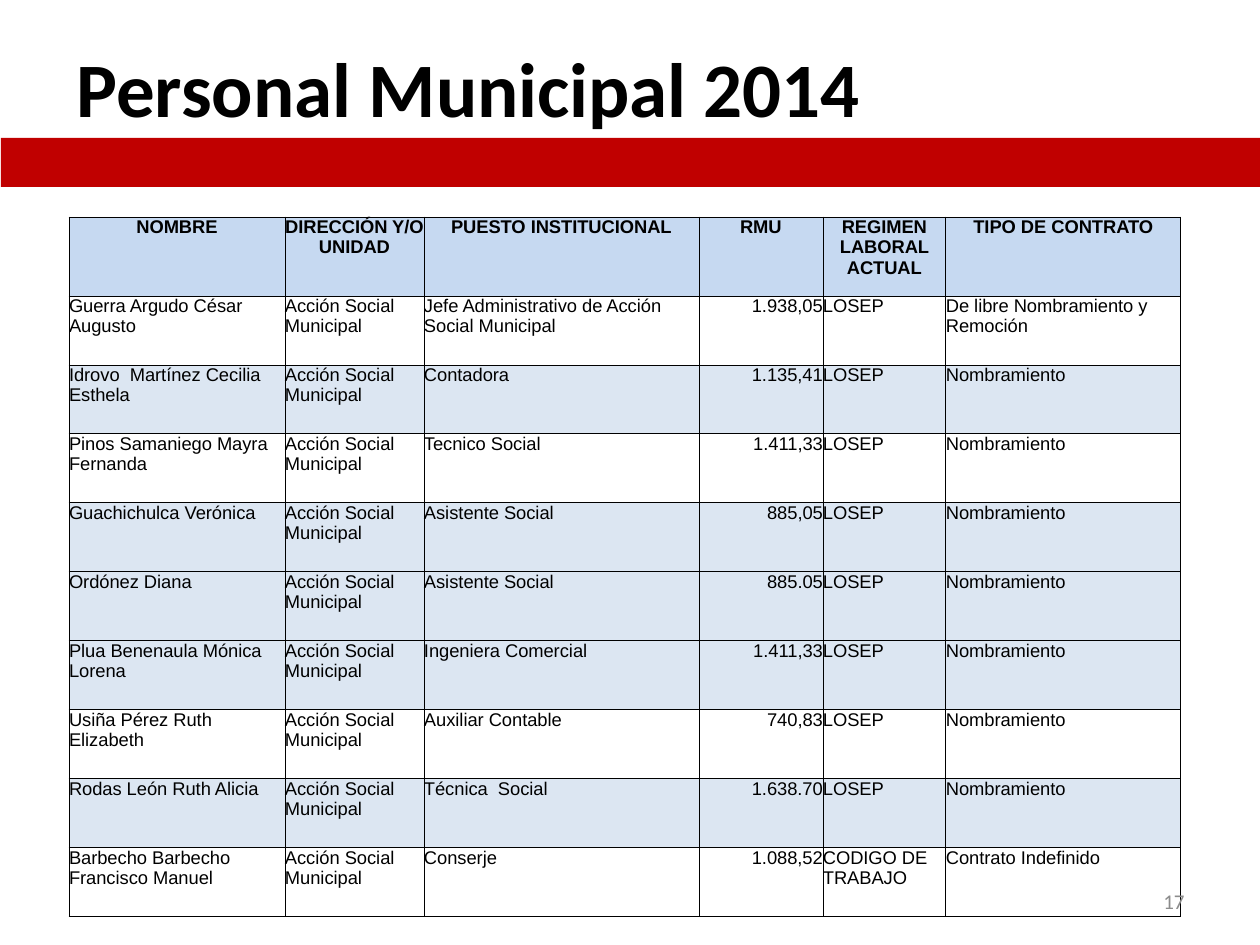
from lxml import etree
from pptx import Presentation
from pptx import util as u
from pptx.dml.color import RGBColor
from pptx.enum import shapes, text
from pptx.oxml import ns

PX_PER_INCH = 126
BLACK = RGBColor(0x00, 0x00, 0x00)
WHITE = RGBColor(0xFF, 0xFF, 0xFF)
RED = RGBColor(0xC0, 0x00, 0x00)
GREY = RGBColor(0x8C, 0x8C, 0x8C)
HEADER_BLUE = RGBColor(0xC6, 0xD9, 0xF1)
ROW_BLUE = RGBColor(0xDC, 0xE6, 0xF2)

LEFT, CENTER, RIGHT = text.PP_ALIGN.LEFT, text.PP_ALIGN.CENTER, text.PP_ALIGN.RIGHT
COLUMN_WIDTHS = [216, 139, 275, 124, 123, 235]
COLUMN_ALIGNS = [LEFT, LEFT, LEFT, RIGHT, LEFT, LEFT]
HEADER_HEIGHT, ROW_HEIGHT = 79, 69
HEADERS = ["NOMBRE", "DIRECCIÓN Y/O UNIDAD", "PUESTO INSTITUCIONAL", "RMU",
           "REGIMEN LABORAL ACTUAL", "TIPO DE CONTRATO"]
UNIT = "Acción Social Municipal"
STAFF = [
    ("Guerra Argudo César  Augusto", "Jefe Administrativo de Acción Social Municipal",
     "1.938,05", "LOSEP", "De libre Nombramiento y Remoción", None),
    ("Idrovo  Martínez Cecilia Esthela", "Contadora", "1.135,41", "LOSEP", "Nombramiento", ROW_BLUE),
    ("Pinos Samaniego Mayra Fernanda", "Tecnico Social", "1.411,33", "LOSEP", "Nombramiento", WHITE),
    ("Guachichulca Verónica", "Asistente Social", "885,05", "LOSEP", "Nombramiento", ROW_BLUE),
    ("Ordónez Diana", "Asistente Social", "885.05", "LOSEP", "Nombramiento", ROW_BLUE),
    ("Plua Benenaula Mónica Lorena", "Ingeniera Comercial", "1.411,33", "LOSEP", "Nombramiento", ROW_BLUE),
    ("Usiña Pérez Ruth Elizabeth", "Auxiliar Contable", "740,83", "LOSEP", "Nombramiento", WHITE),
    ("Rodas León Ruth Alicia", "Técnica  Social", "1.638.70", "LOSEP", "Nombramiento", ROW_BLUE),
    ("Barbecho Barbecho Francisco Manuel", "Conserje", "1.088,52", "CODIGO DE TRABAJO",
     "Contrato Indefinido", WHITE),
]


def px(length):
    """Turn whole pixels into EMU."""
    return u.Emu(round(length * 914400 / PX_PER_INCH))


def write(frame, words, font, size, color=BLACK, bold=False, align=LEFT):
    """Put one formatted paragraph into a text frame."""
    frame.text = words
    frame.word_wrap = True
    para = frame.paragraphs[0]
    para.alignment = align
    for span in para.runs:
        span.font.name = font
        span.font.size = u.Pt(size)
        span.font.bold = bold
        span.font.color.rgb = color


def add_label(page, bounds, words, size, **style):
    """Add a vertically centred Calibri text box."""
    box = page.shapes.add_textbox(*map(px, bounds))
    box.text_frame.vertical_anchor = text.MSO_ANCHOR.MIDDLE
    write(box.text_frame, words, "Calibri", size, **style)


def add_band(page, bounds, color):
    """Add a plain filled rectangle."""
    band = page.shapes.add_shape(shapes.MSO_SHAPE.RECTANGLE, *map(px, bounds))
    band.shadow.inherit = False
    band.fill.solid()
    band.fill.fore_color.rgb = color
    band.line.fill.background()


def add_borders(cell):
    """Draw thin black lines on all four sides of a cell."""
    properties = cell._tc.get_or_add_tcPr()
    for side in ("lnL", "lnR", "lnT", "lnB"):
        line = etree.SubElement(properties, ns.qn(f"a:{side}"), w=str(u.Pt(0.5)))
        fill = etree.SubElement(line, ns.qn("a:solidFill"))
        etree.SubElement(fill, ns.qn("a:srgbClr"), val=str(BLACK))


def fill_row(cells, values, aligns, color, bold=False):
    """Write and style the cells of one table row."""
    for cell, words, align in zip(cells, values, aligns):
        cell.margin_left = cell.margin_right = cell.margin_top = cell.margin_bottom = 0
        add_borders(cell)
        if color is None:
            cell.fill.background()
        else:
            cell.fill.solid()
            cell.fill.fore_color.rgb = color
        write(cell.text_frame, words, "Arial", 10.5, bold=bold, align=align)


def add_staff_table(page, left, top):
    """Add the staff table with its header row."""
    heights = [HEADER_HEIGHT] + [ROW_HEIGHT] * len(STAFF)
    table = page.shapes.add_table(len(heights), len(HEADERS), px(left), px(top),
                                  px(sum(COLUMN_WIDTHS)), px(sum(heights))).table
    table.first_row = table.horz_banding = False
    for column, width in zip(table.columns, COLUMN_WIDTHS):
        column.width = px(width)
    for row, height in zip(table.rows, heights):
        row.height = px(height)
    header, *rows = table.rows
    fill_row(header.cells, HEADERS, [CENTER] * len(HEADERS), HEADER_BLUE, bold=True)
    for row, (name, post, pay, regime, contract, color) in zip(rows, STAFF):
        fill_row(row.cells, [name, UNIT, post, pay, regime, contract], COLUMN_ALIGNS, color)


def main():
    """Build and save the slide."""
    deck = Presentation()
    deck.slide_width, deck.slide_height = px(1260), px(945)
    page = deck.slides.add_slide(deck.slide_layouts[6])
    add_label(page, (64, 8, 1134, 157), "Personal Municipal 2014", 44, bold=True)
    add_staff_table(page, 69, 217)
    add_band(page, (1, 138, 1260, 49), RED)
    add_label(page, (903, 876, 294, 50), "17", 12, color=GREY, align=RIGHT)
    deck.save("out.pptx")


if __name__ == "__main__":
    main()
